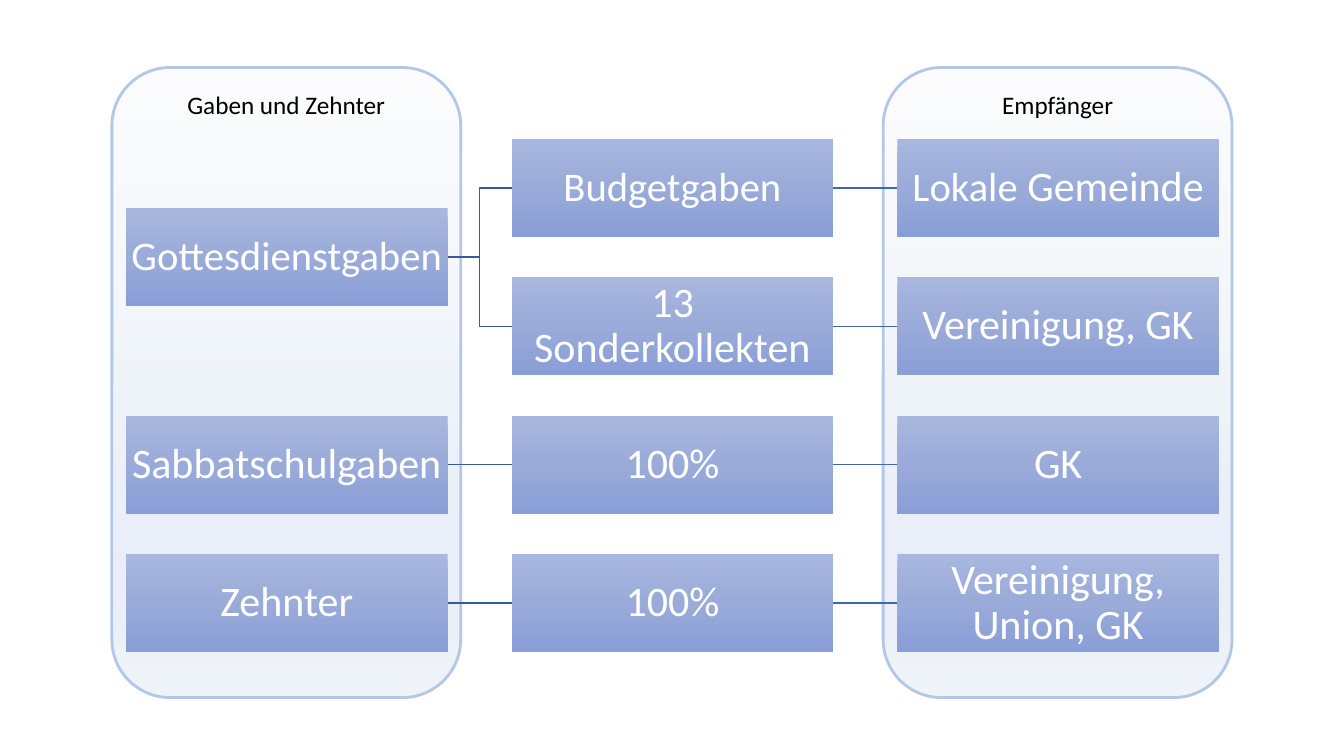
"""Build the slide that shows where offerings and tithes go."""
from lxml.etree import SubElement
from pptx import Presentation
from pptx.dml.color import RGBColor
from pptx.enum.shapes import MSO_CONNECTOR, MSO_SHAPE
from pptx.enum.text import MSO_ANCHOR, PP_ALIGN
from pptx.oxml.ns import qn
from pptx.util import Inches, Pt

RECTANGLE = MSO_SHAPE.RECTANGLE
ROUNDED = MSO_SHAPE.ROUNDED_RECTANGLE
STRAIGHT = MSO_CONNECTOR.STRAIGHT
ELBOW = MSO_CONNECTOR.ELBOW
CENTER = PP_ALIGN.CENTER
LEFT_SIDE, RIGHT_SIDE = 1, 3

FONT = "Calibri"
PANEL_STOPS = [(0, "F6F8FC"), (74, "ABC0E4"), (83, "ABC0E4"), (100, "C7D5ED")]
BOX_STOPS = [(0, "A8B7DF"), (50, "9AABD9"), (100, "889ED7")]
PANEL_LINE = "B4C7E7"
SPLIT_LINE, RECEIVER_LINE = "365B9D", "3E67B2"

PANEL_TOP, PANEL_WIDTH, PANEL_HEIGHT = 0.67, 3.46, 6.25
PANELS = [("Empfänger", 8.76), ("Gaben und Zehnter", 1.11)]

BOX_WIDTH, BOX_HEIGHT = 3.19, 0.97
FIRST_LEFT, COLUMN_STEP = 1.25, 3.825
FIRST_TOP, ROW_STEP = 1.38, 1.373
GIFTS = [
    (0.5, [("Gottesdienstgaben", 29)]),
    (2, [("Sabbatschulgaben", 30)]),
    (3, [("Zehnter", 30)]),
]
SHARES = [
    (0, [("Budgetgaben", 29)]),
    (1, [("13 Sonderkollekten", 30)]),
    (2, [("100%", 30)]),
    (3, [("100%", 30)]),
]
RECEIVERS = [
    (0, [("Lokale", 29), (" Gemeinde", 30)]),
    (1, [("Vereinigung, GK", 30)]),
    (2, [("GK", 30)]),
    (3, [("Vereinigung, Union, GK", 30)]),
]
GIFT_OF_SHARE = [0, 0, 1, 2]

PANEL_FRAME = {"word_wrap": True, "vertical_anchor": MSO_ANCHOR.TOP}
BOX_FRAME = {
    "word_wrap": True,
    "vertical_anchor": MSO_ANCHOR.MIDDLE,
    "margin_left": Inches(0.02),
    "margin_right": Inches(0.02),
    "margin_top": Inches(0.02),
    "margin_bottom": Inches(0.02),
}


def rgb(code):
    return RGBColor.from_string(code)


def apply(target, values):
    for name, value in values.items():
        setattr(target, name, value)


def fill_gradient(shape, stops, opacity=100):
    shape.fill.gradient()
    shape.fill.gradient_angle = 270
    stop_list = shape._element.spPr.find(qn("a:gradFill")).find(qn("a:gsLst"))
    for old_stop in list(stop_list):
        stop_list.remove(old_stop)
    for position, code in stops:
        stop = SubElement(stop_list, qn("a:gs"), pos=str(position * 1000))
        color = SubElement(stop, qn("a:srgbClr"), val=code)
        if opacity < 100:
            SubElement(color, qn("a:alpha"), val=str(opacity * 1000))


def write_text(shape, runs, color, frame_format, line_spacing):
    apply(shape.text_frame, frame_format)
    paragraph = shape.text_frame.paragraphs[0]
    apply(paragraph, {"alignment": CENTER, "line_spacing": line_spacing})
    for words, size in runs:
        run = paragraph.add_run()
        run.text = words
        apply(run.font, {"name": FONT, "size": Pt(size)})
        run.font.color.rgb = rgb(color)


def add_panel(slide, title, left):
    panel = slide.shapes.add_shape(
        ROUNDED, Inches(left), Inches(PANEL_TOP),
        Inches(PANEL_WIDTH), Inches(PANEL_HEIGHT))
    panel.shadow.inherit = False
    fill_gradient(panel, PANEL_STOPS, opacity=25)
    panel.line.color.rgb = rgb(PANEL_LINE)
    panel.line.width = Pt(2)
    write_text(panel, [(title, 18)], "000000", PANEL_FRAME, 1.0)


def add_box(slide, column, row, runs):
    box = slide.shapes.add_shape(
        RECTANGLE, Inches(FIRST_LEFT + column * COLUMN_STEP),
        Inches(FIRST_TOP + row * ROW_STEP),
        Inches(BOX_WIDTH), Inches(BOX_HEIGHT))
    box.shadow.inherit = False
    fill_gradient(box, BOX_STOPS)
    box.line.fill.background()
    write_text(box, runs, "FFFFFF", BOX_FRAME, 0.9)
    return box


def add_column(slide, column, entries):
    return [add_box(slide, column, row, runs) for row, runs in entries]


def add_link(slide, giver, taker, color):
    kind = STRAIGHT if giver.top == taker.top else ELBOW
    link = slide.shapes.add_connector(kind, 0, 0, 0, 0)
    link.begin_connect(giver, RIGHT_SIDE)
    link.end_connect(taker, LEFT_SIDE)
    link.line.color.rgb = rgb(color)
    link.line.width = Pt(1)
    SubElement(link._element.spPr, qn("a:effectLst"))


def main():
    deck = Presentation()
    apply(deck, {"slide_width": Inches(13.33), "slide_height": Inches(7.5)})
    slide = deck.slides.add_slide(deck.slide_layouts[6])
    for title, left in PANELS:
        add_panel(slide, title, left)
    gifts, shares, receivers = [
        add_column(slide, column, entries)
        for column, entries in enumerate([GIFTS, SHARES, RECEIVERS])]
    for gift_index, share, receiver in zip(GIFT_OF_SHARE, shares, receivers):
        add_link(slide, gifts[gift_index], share, SPLIT_LINE)
        add_link(slide, share, receiver, RECEIVER_LINE)
    deck.save("out.pptx")


if __name__ == "__main__":
    main()
